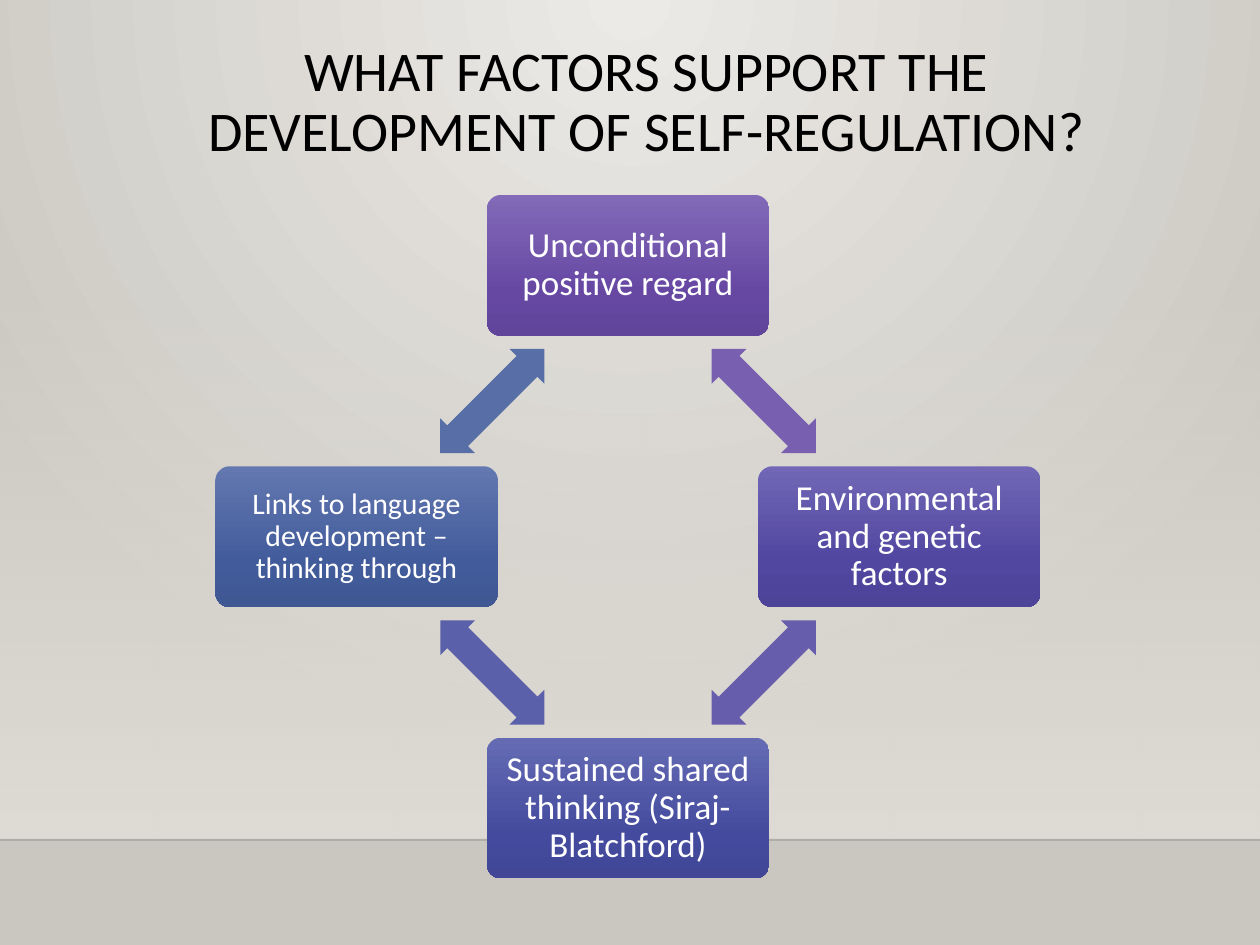
from dataclasses import dataclass
from math import cos, radians, sin

from pptx import Presentation
from pptx.dml.color import RGBColor
from pptx.enum.shapes import MSO_CONNECTOR, MSO_SHAPE
from pptx.enum.text import MSO_ANCHOR, PP_ALIGN
from pptx.oxml import parse_xml
from pptx.oxml.ns import nsdecls
from pptx.util import Cm, Pt

RECT = MSO_SHAPE.RECTANGLE
ROUND = MSO_SHAPE.ROUNDED_RECTANGLE
ARROW = MSO_SHAPE.LEFT_RIGHT_ARROW
LINE = MSO_CONNECTOR.STRAIGHT
MIDDLE = MSO_ANCHOR.MIDDLE
CENTER = PP_ALIGN.CENTER

DOWN = '<a:lin ang="5400000" scaled="0"/>'
GLOW = '<a:path path="circle"><a:fillToRect l="43000" t="0" r="43000" b="100000"/></a:path>'

WIDE, HIGH = 25.4, 19.05
FLOOR = 16.93
MID_X, MID_Y, RADIUS = 12.66, 10.82, 5.47

FACTORS = [
    ("Unconditional positive regard", 20, ("836AB8", "6648A3", "60459A"), "795FAF"),
    ("Environmental and genetic factors", 20, ("7167B6", "5146A0", "4D4398"), "665DAC"),
    ("Sustained shared thinking (Siraj-Blatchford)", 20, ("656BB3", "444B9E", "414796"), "5A60A9"),
    ("Links to language development – thinking through", 17, ("6378B0", "425B9B", "3F5793"), "586EA6"),
]


@dataclass(frozen=True)
class Theme:
    font: str = "Calibri"
    ink: str = "000000"
    pale: str = "FFFFFF"
    light: str = "ECEAE7"
    dark: str = "CAC7C1"
    wall: str = "DFDBD5"
    edge: str = "000001"
    head: int = 32
    lead: float = 0.9


class Deck:
    """Draws styled elements on the current slide."""

    def __init__(self, theme):
        self.theme = theme
        self.file = Presentation()
        self.file.slide_width, self.file.slide_height = Cm(WIDE), Cm(HIGH)
        self.slide = self.file.slides.add_slide(self.file.slide_layouts[6])

    def blend(self, owner, fill, stops, way):
        fill.gradient()
        marks = "".join(
            f'<a:gs pos="{spot * 1000}"><a:srgbClr val="{color}">'
            f'<a:alpha val="{alpha * 1000}"/></a:srgbClr></a:gs>'
            for spot, color, alpha in stops
        )
        node = owner.element.xpath(".//a:gradFill")[0]
        node.getparent().replace(node, parse_xml(
            f'<a:gradFill {nsdecls("a")} rotWithShape="1">'
            f"<a:gsLst>{marks}</a:gsLst>{way}</a:gradFill>"
        ))

    def back(self):
        stops = [(0, self.theme.light, 100), (100, self.theme.dark, 100)]
        self.blend(self.slide, self.slide.background.fill, stops, GLOW)

    def shape(self, kind, x, y, wide, high):
        shape = self.slide.shapes.add_shape(kind, Cm(x), Cm(y), Cm(wide), Cm(high))
        shape.shadow.inherit = False
        shape.line.fill.background()
        return shape

    def band(self, top):
        band = self.shape(RECT, 0, top, WIDE, FLOOR - top)
        stops = [(0, self.theme.wall, 0), (100, self.theme.wall, 100)]
        self.blend(band, band.fill, stops, DOWN)

    def rule(self, y):
        rule = self.slide.shapes.add_connector(LINE, 0, Cm(y), Cm(WIDE), Cm(y))
        rule.line.width = Pt(1)
        rule.line.color.rgb = RGBColor.from_string(self.theme.edge)
        tint = rule.element.xpath(".//a:ln//a:srgbClr")[0]
        tint.append(parse_xml(f'<a:alpha {nsdecls("a")} val="20000"/>'))
        rule.element.spPr.append(parse_xml(f'<a:effectLst {nsdecls("a")}/>'))

    def label(self, frame, lines, size, color):
        frame.word_wrap = True
        para = frame.paragraphs[0]
        para.alignment = CENTER
        para.line_spacing = self.theme.lead
        for i, line in enumerate(lines):
            if i:
                para.add_line_break()
            run = para.add_run()
            run.text = line
            run.font.name = self.theme.font
            run.font.size = Pt(size)
            run.font.color.rgb = RGBColor.from_string(color)

    def title(self, lines):
        text = self.slide.shapes.add_textbox(Cm(0.97), Cm(0.74), Cm(24.13), Cm(2.06))
        self.label(text.text_frame, lines, self.theme.head, self.theme.ink)

    def box(self, x, y, text, size, colors):
        wide, high = 5.69, 2.84
        box = self.shape(ROUND, x - wide / 2, y - high / 2, wide, high)
        box.adjustments[0] = 0.1
        stops = [(spot, color, 100) for spot, color in zip((0, 69, 100), colors)]
        self.blend(box, box.fill, stops, DOWN)
        frame = box.text_frame
        frame.vertical_anchor = MIDDLE
        frame.margin_left = frame.margin_right = Cm(0.28)
        frame.margin_top = frame.margin_bottom = Cm(0.28)
        self.label(frame, [text], size, self.theme.pale)

    def arrow(self, x, y, turn, color):
        wide, high = 2.97, 0.99
        arrow = self.shape(ARROW, x - wide / 2, y - high / 2, wide, high)
        arrow.adjustments[0], arrow.adjustments[1] = 0.6, 0.5
        arrow.rotation = turn
        arrow.fill.solid()
        arrow.fill.fore_color.rgb = RGBColor.from_string(color)


def orbit(turn, reach):
    angle = radians(turn)
    return MID_X + reach * sin(angle), MID_Y - reach * cos(angle)


def main():
    deck = Deck(Theme())
    deck.back()
    deck.band(5.59)
    deck.rule(FLOOR)
    deck.title(["WHAT FACTORS SUPPORT THE", "DEVELOPMENT OF SELF-REGULATION?"])
    for i, (text, size, colors, link) in enumerate(FACTORS):
        turn = 90 * i
        deck.box(*orbit(turn, RADIUS), text, size, colors)
        deck.arrow(*orbit(turn + 45, RADIUS * cos(radians(45))), turn + 45, link)
    deck.file.save("out.pptx")


if __name__ == "__main__":
    main()
